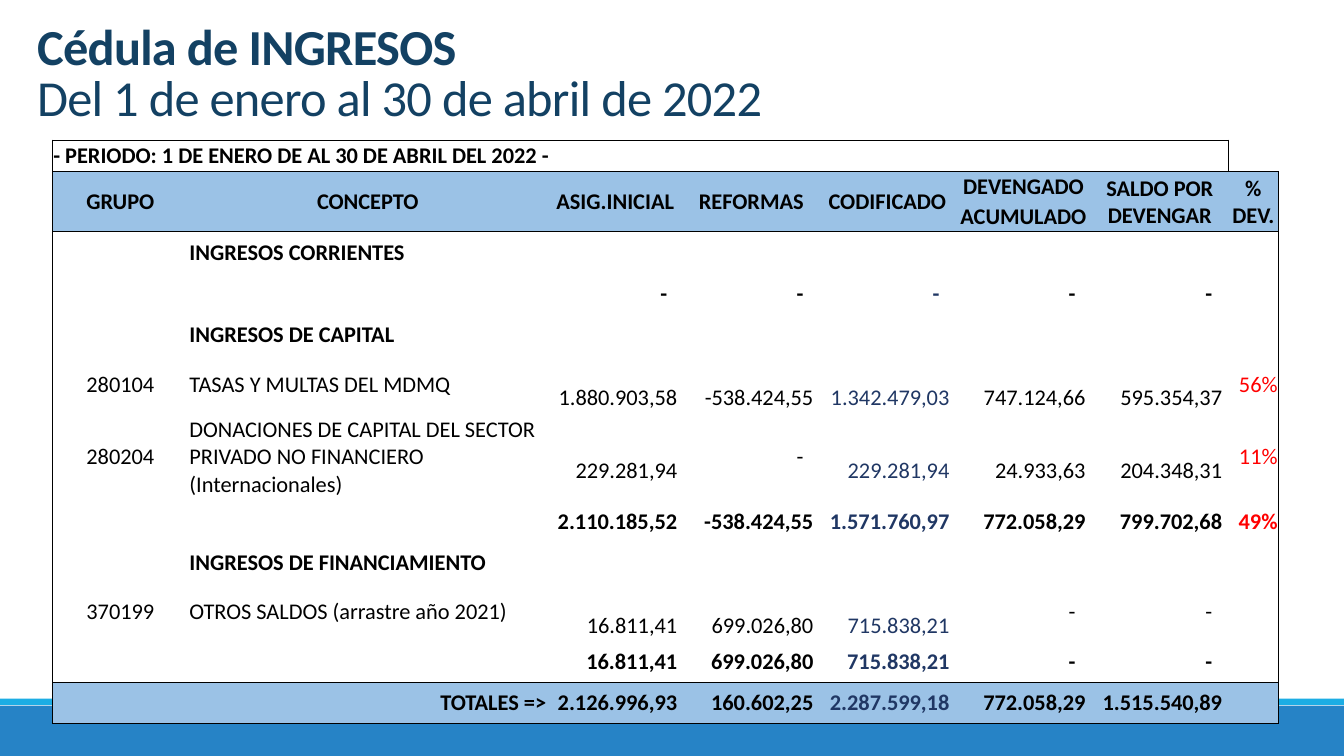
from dataclasses import dataclass

from lxml.etree import SubElement
from pptx import Presentation
from pptx.dml.color import RGBColor
from pptx.enum.shapes import MSO_SHAPE as Shape
from pptx.enum.text import MSO_ANCHOR as Anchor, PP_ALIGN as Align
from pptx.oxml.ns import qn
from pptx.util import Pt


@dataclass(frozen=True)
class Theme:
    """Colours, type sizes and line width of the slide."""

    font: str = "Calibri"
    title_size: int = 36
    table_size: int = 16
    border_width: float = 0.5
    title: str = "134163"
    text: str = "000000"
    codified: str = "203764"
    percent: str = "FF0000"
    band: str = "9BC2E6"
    footer: str = "2683C6"
    accent: str = "1CADE4"


THEME = Theme()
COLUMN_WIDTHS = (97.2, 256.3, 97.2, 97.2, 97.2, 97.2, 97.6, 36)
ROW_HEIGHTS = (21.6, 21.6, 21.6, 29.3, 29.3, 29.3, 41.6, 62.7, 29.3, 29.3, 41.6, 29.3, 29.3)
HEADER_ROWS = (1, 2)
TOTAL_ROW = 12
FULL_RULES = (1, 3, 12, 13)
CODIFIED_COLUMN, PERCENT_COLUMN = 4, 7
LINE_HEIGHT, EDGE, NUMBER_EDGE, DASH_EDGE = 19.5, 0.72, 4.3, 11.5
ROWS = (
    ("- PERIODO: 1 DE ENERO DE AL 30 DE ABRIL DEL 2022 -",) + ("",) * 7,
    ("GRUPO", "CONCEPTO", "ASIG.INICIAL", "REFORMAS", "CODIFICADO", "DEVENGADO",
     "SALDO POR DEVENGAR", "%\nDEV."),
    ("", "", "", "", "", "ACUMULADO", "", ""),
    ("", "INGRESOS CORRIENTES", "", "", "", "", "", ""),
    ("", "", "-", "-", "-", "-", "-", ""),
    ("", "INGRESOS DE CAPITAL", "", "", "", "", "", ""),
    ("280104", "TASAS Y MULTAS DEL MDMQ", "1.880.903,58", "-538.424,55",
     "1.342.479,03", "747.124,66", "595.354,37", "56%"),
    ("280204", "DONACIONES DE CAPITAL DEL SECTOR PRIVADO NO FINANCIERO (Internacionales)",
     "229.281,94", "-", "229.281,94", "24.933,63", "204.348,31", "11%"),
    ("", "", "2.110.185,52", "-538.424,55", "1.571.760,97", "772.058,29", "799.702,68", "49%"),
    ("", "INGRESOS DE FINANCIAMIENTO", "", "", "", "", "", ""),
    ("370199", "OTROS SALDOS (arrastre año 2021)", "16.811,41", "699.026,80",
     "715.838,21", "-", "-", ""),
    ("", "", "16.811,41", "699.026,80", "715.838,21", "-", "-", ""),
    ("", "TOTALES =>", "2.126.996,93", "160.602,25", "2.287.599,18", "772.058,29",
     "1.515.540,89", ""),
)
DETAIL_ROWS = [index for index, values in enumerate(ROWS) if values[0].isdigit()]


def set_attributes(target, formats):
    """Set every attribute named in a dict of format values."""
    for name, value in formats.items():
        setattr(target, name, value)


def add_text(paragraph, text, color, size, bold):
    """Add text to a paragraph, with a line break at each newline."""
    for index, line in enumerate(text.split("\n")):
        if index:
            paragraph.add_line_break()
        run = paragraph.add_run()
        run.text = line
        set_attributes(run.font, {"name": THEME.font, "size": Pt(size), "bold": bold})
        run.font.color.rgb = RGBColor.from_string(color)


def add_bar(slide, left, top, width, height, color):
    """Draw one plain footer bar."""
    bar = slide.shapes.add_shape(Shape.RECTANGLE, Pt(left), Pt(top), Pt(width), Pt(height))
    bar.shadow.inherit = False
    bar.fill.solid()
    bar.fill.fore_color.rgb = RGBColor.from_string(color)
    bar.line.fill.background()


def add_footer(slide, left, top, width, height):
    """Draw the footer band below its thin accent strip."""
    strip = 4.6
    add_bar(slide, left, top + 5, width, height - 5, THEME.footer)
    add_bar(slide, left, top, width, strip, THEME.accent)


def add_title(slide, left, top, width, height):
    """Write the two-line title at the bottom of its box."""
    box = slide.shapes.add_textbox(Pt(left), Pt(top), Pt(width), Pt(height))
    set_attributes(box.text_frame, {"word_wrap": True, "vertical_anchor": Anchor.BOTTOM})
    paragraph = box.text_frame.paragraphs[0]
    paragraph.line_spacing = 0.85
    add_text(paragraph, "Cédula de INGRESOS", THEME.title, THEME.title_size, True)
    paragraph.add_line_break()
    add_text(paragraph, "Del 1 de enero al 30 de abril de 2022",
             THEME.title, THEME.title_size, False)
    for run in paragraph.runs:
        run.font._element.set("spc", "-50")


def has_horizontal_rule(edge, column):
    """Tell whether a row edge is ruled in the given column."""
    return edge in FULL_RULES or (edge == 0 and column < PERCENT_COLUMN)


def has_vertical_rule(edge, row):
    """Tell whether a column edge is ruled in the given row."""
    return edge in (0, 7 if row == 0 else 8)


def set_borders(cell, row, column):
    """Rule the four sides of a cell according to its place."""
    bottom = row + (cell.span_height if cell.is_merge_origin else 1)
    right = column + (cell.span_width if cell.is_merge_origin else 1)
    sides = {
        "a:lnL": has_vertical_rule(column, row),
        "a:lnR": has_vertical_rule(right, row),
        "a:lnT": has_horizontal_rule(row, column),
        "a:lnB": has_horizontal_rule(bottom, column),
    }
    properties = cell._tc.get_or_add_tcPr()
    for tag, ruled in sides.items():
        line = SubElement(properties, qn(tag), w=str(Pt(THEME.border_width)))
        if ruled:
            fill = SubElement(line, qn("a:solidFill"))
            SubElement(fill, qn("a:srgbClr"), val=THEME.text)
        else:
            SubElement(line, qn("a:noFill"))


def cell_alignment(row, column):
    """Return the alignment of a cell."""
    if row in HEADER_ROWS or (column == 0 and row > 0):
        return Align.CENTER
    if column > 1 or (row == TOTAL_ROW and column == 1):
        return Align.RIGHT
    return Align.LEFT


def cell_color(row, column):
    """Return the text colour of a cell."""
    if row in HEADER_ROWS:
        return THEME.text
    return {CODIFIED_COLUMN: THEME.codified, PERCENT_COLUMN: THEME.percent}.get(column, THEME.text)


def cell_margins(row, column, text):
    """Return the insets that place labels, amounts and dashes."""
    amount = row not in HEADER_ROWS and 1 < column < PERCENT_COLUMN
    right = (DASH_EDGE if text == "-" else NUMBER_EDGE) if amount else EDGE
    lowered = amount and row in DETAIL_ROWS and text != "-"
    return {
        "margin_left": Pt(EDGE),
        "margin_right": Pt(right),
        "margin_top": Pt(EDGE + LINE_HEIGHT if lowered else EDGE),
        "margin_bottom": Pt(0),
        "vertical_anchor": Anchor.MIDDLE,
    }


def fill_cell(cell, row, column, text):
    """Write and format one table cell."""
    set_attributes(cell, cell_margins(row, column, text))
    set_borders(cell, row, column)
    if row in HEADER_ROWS or row == TOTAL_ROW:
        cell.fill.solid()
        cell.fill.fore_color.rgb = RGBColor.from_string(THEME.band)
    else:
        cell.fill.background()
    paragraph = cell.text_frame.paragraphs[0]
    paragraph.alignment = cell_alignment(row, column)
    add_text(paragraph, text, cell_color(row, column), THEME.table_size, row not in DETAIL_ROWS)


def add_income_table(slide, left, top):
    """Build the income table from its top left corner."""
    frame = slide.shapes.add_table(len(ROWS), len(COLUMN_WIDTHS), Pt(left), Pt(top),
                                   Pt(sum(COLUMN_WIDTHS)), Pt(sum(ROW_HEIGHTS)))
    table = frame.table
    set_attributes(table, {"first_row": False, "horz_banding": False})
    for column, width in zip(table.columns, COLUMN_WIDTHS):
        column.width = Pt(width)
    for row, height in zip(table.rows, ROW_HEIGHTS):
        row.height = Pt(height)
    table.cell(0, 0).merge(table.cell(0, 6))
    for column, label in enumerate(ROWS[2]):
        if not label:
            table.cell(1, column).merge(table.cell(2, column))
    for row, values in enumerate(ROWS):
        for column, text in enumerate(values):
            fill_cell(table.cell(row, column), row, column, text)


def main():
    """Build and save the presentation."""
    presentation = Presentation()
    set_attributes(presentation, {"slide_width": Pt(960), "slide_height": Pt(540)})
    slide = presentation.slides.add_slide(presentation.slide_layouts[6])
    add_footer(slide, 0, 499, 960, 41)
    add_title(slide, 19.4, 23.8, 646.6, 70.6)
    add_income_table(slide, 37.4, 100)
    presentation.save("out.pptx")


if __name__ == "__main__":
    main()
